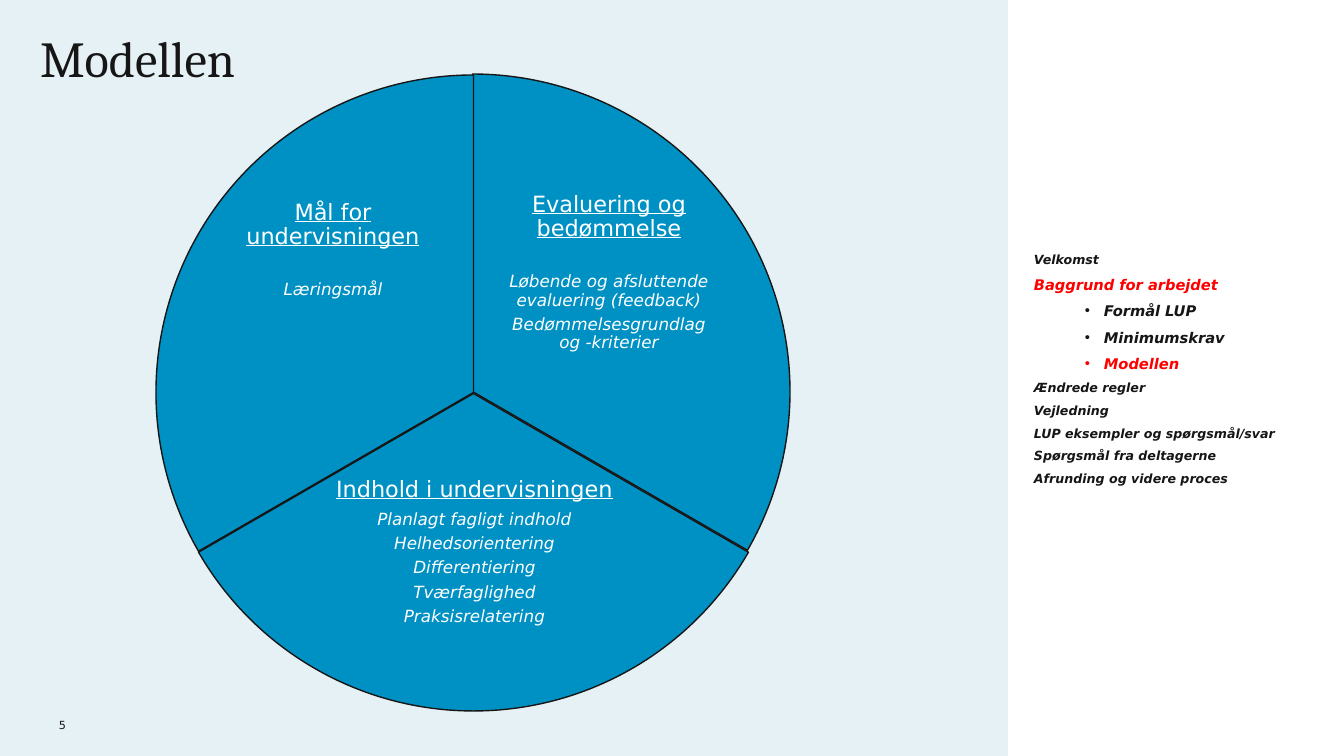
from dataclasses import dataclass

from lxml.etree import SubElement
from pptx import Presentation
from pptx.dml.color import RGBColor
from pptx.enum.shapes import MSO_SHAPE as Shape
from pptx.enum.text import MSO_ANCHOR as Anchor, MSO_AUTO_SIZE as Fit, PP_ALIGN as Align
from pptx.oxml.ns import qn
from pptx.util import Pt

TITLE = "Modellen"
NUMBER = "5"

# start and end angle, pie corner, text box, gap after heading (pt), heading, lines
SECTORS = [
    (270, 30, (155, 74), (501, 191, 216, 212), 23, "Evaluering og bedømmelse",
     ["Løbende og afsluttende evaluering (feedback)", "Bedømmelsesgrundlag og -kriterier"]),
    (30, 150, (156, 76), (331, 476, 287, 197), 6, "Indhold i undervisningen",
     ["Planlagt fagligt indhold", "Helhedsorientering", "Differentiering",
      "Tværfaglighed", "Praksisrelatering"]),
    (150, 270, (156, 75), (225, 199, 216, 212), 23, "Mål for undervisningen",
     ["Læringsmål"]),
]

# text, level, type size name, colour name
AGENDA = [
    ("Velkomst", 0, "small", "ink"),
    ("Baggrund for arbejdet", 0, "topic", "active"),
    ("Formål LUP", 1, "topic", "ink"),
    ("Minimumskrav", 1, "topic", "ink"),
    ("Modellen", 1, "topic", "active"),
    ("Ændrede regler", 0, "small", "ink"),
    ("Vejledning", 0, "small", "ink"),
    ("LUP eksempler og spørgsmål/svar", 0, "small", "ink"),
    ("Spørgsmål fra deltagerne", 0, "small", "ink"),
    ("Afrunding og videre proces", 0, "small", "ink"),
]


@dataclass(frozen=True)
class Theme:
    back: str = "E5F1F4"
    panel: str = "FFFFFF"
    ink: str = "161616"
    active: str = "FF0000"
    pie: str = "0091C4"
    light: str = "FFFFFF"
    serif: str = "Cambria"
    sans: str = "DejaVu Sans"
    title: float = 36
    head: float = 16
    body: float = 12
    topic: float = 10.5
    small: float = 9
    number: float = 8


THEME = Theme()
SCALE = 914400 / 100.8
WIDE, HIGH = 1344, 756
PANEL = 1008
DISC = 635


def px(n):
    return round(n * SCALE)


def rgb(code):
    return RGBColor.from_string(code)


def place(shape, box):
    shape.left, shape.top, shape.width, shape.height = map(px, box)


def prepare(frame, inset=0, anchor=Anchor.TOP):
    frame.word_wrap = True
    frame.auto_size = Fit.NONE
    frame.vertical_anchor = anchor
    frame.margin_left = frame.margin_right = px(inset)
    frame.margin_top = frame.margin_bottom = px(inset)


def style(para, size, color, face=THEME.sans, bold=False, italic=False, under=False):
    for run in para.runs:
        font = run.font
        font.name, font.size = face, Pt(size)
        font.color.rgb = rgb(color)
        font.bold, font.italic, font.underline = bold, italic, under


def indent(para, level):
    """Set the list indent, with a bullet on the inner level only."""
    props = para._p.get_or_add_pPr()
    props.set("marL", str(px(70 * level)))
    props.set("indent", str(px(-19 * level)))
    if level:
        SubElement(props, qn("a:buChar")).set("char", "•")
    else:
        SubElement(props, qn("a:buNone"))


def add_panel(slide):
    panel = slide.shapes.add_shape(Shape.RECTANGLE, px(PANEL), 0, px(WIDE - PANEL), px(HIGH))
    panel.shadow.inherit = False
    panel.fill.solid()
    panel.fill.fore_color.rgb = rgb(THEME.panel)
    panel.line.fill.background()
    slide.shapes._spTree.insert(2, panel._element)  # behind the agenda


def add_sector(shapes, start, end, corner, box, gap, head, lines):
    pie = shapes.add_shape(Shape.PIE, *map(px, (*corner, DISC, DISC)))
    pie.shadow.inherit = False
    pie.adjustments[0], pie.adjustments[1] = start * 0.6, end * 0.6
    pie.fill.solid()
    pie.fill.fore_color.rgb = rgb(THEME.pie)
    pie.line.color.rgb = rgb(THEME.ink)
    pie.line.width = Pt(1)

    frame = shapes.add_textbox(*map(px, box)).text_frame
    prepare(frame, inset=2)
    frame.text = "\n".join([head, *lines])
    for i, para in enumerate(frame.paragraphs):
        para.alignment = Align.CENTER
        para.line_spacing = 0.9
        para.space_after = Pt(4.5 if i else gap)
        style(para, THEME.body if i else THEME.head, THEME.light,
              italic=i > 0, under=i == 0)


def fill_title(title):
    place(title, (40, 37, 888, 82))
    frame = title.text_frame
    prepare(frame)
    frame.text = TITLE
    para = frame.paragraphs[0]
    para.alignment = Align.LEFT
    para.line_spacing = 0.83
    style(para, THEME.title, THEME.ink, THEME.serif)


def fill_agenda(body):
    place(body, (1034, 244, 287, 245))
    frame = body.text_frame
    prepare(frame)
    frame.text = "\n".join(item[0] for item in AGENDA)
    for para, (_, level, size, color) in zip(frame.paragraphs, AGENDA):
        para.level = level
        indent(para, level)
        para.line_spacing = 1.5
        para.space_before = Pt(0)
        style(para, getattr(THEME, size), getattr(THEME, color), bold=True, italic=True)


def add_number(slide):
    frame = slide.shapes.add_textbox(*map(px, (59, 712, 30, 20))).text_frame
    prepare(frame, anchor=Anchor.BOTTOM)
    frame.text = NUMBER
    style(frame.paragraphs[0], THEME.number, THEME.ink)


def main():
    deck = Presentation()
    deck.slide_width, deck.slide_height = px(WIDE), px(HIGH)
    slide = deck.slides.add_slide(deck.slide_layouts[1])
    slide.background.fill.solid()
    slide.background.fill.fore_color.rgb = rgb(THEME.back)
    add_panel(slide)
    fill_title(slide.shapes.title)
    add_number(slide)
    wheel = slide.shapes.add_group_shape()
    for sector in SECTORS:
        add_sector(wheel.shapes, *sector)
    fill_agenda(slide.placeholders[1])
    deck.save("out.pptx")


if __name__ == "__main__":
    main()
